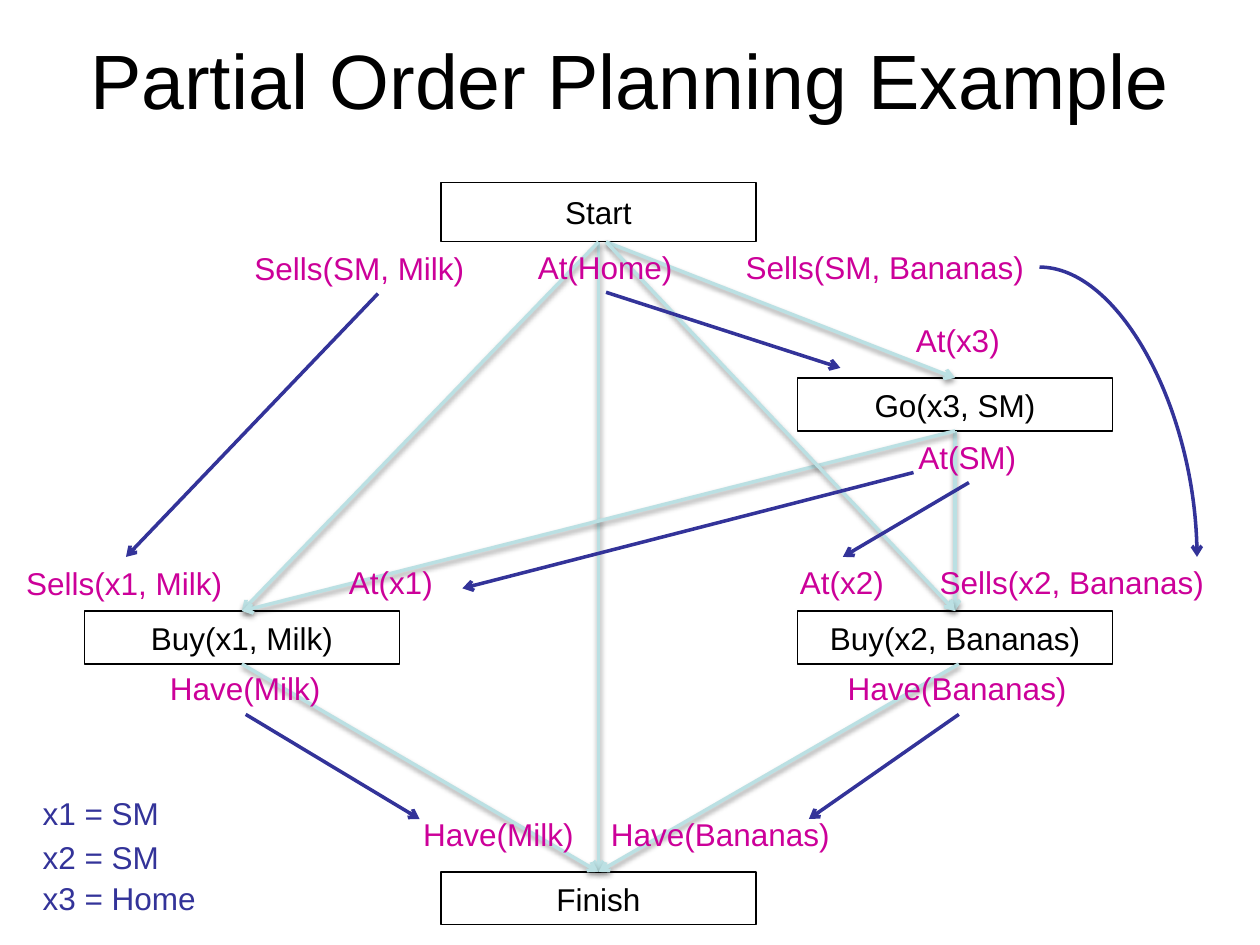
from dataclasses import dataclass

from lxml.etree import SubElement
from pptx import Presentation
from pptx.dml.color import RGBColor
from pptx.enum.shapes import MSO_CONNECTOR, MSO_SHAPE
from pptx.enum.text import MSO_ANCHOR, MSO_AUTO_SIZE, PP_ALIGN
from pptx.oxml.ns import qn
from pptx.slide import Slide
from pptx.util import Inches, Pt

TOP, BOTTOM = 0, 2


def color(hex_code):
    return RGBColor.from_string(hex_code)


@dataclass
class Diagram:
    slide: Slide
    font: str = "Arial"
    ink: str = "000000"
    paper: str = "FFFFFF"
    condition: str = "CC0099"
    causal: str = "333399"
    ordering: str = "BBE0E3"

    def set_text(self, frame, text, hex_code, size=18, align=None):
        frame.text = text
        paragraph = frame.paragraphs[0]
        paragraph.alignment = align
        paragraph.font.name = self.font
        paragraph.font.size = Pt(size)
        paragraph.font.color.rgb = color(hex_code)

    def title(self, text):
        frame = self.slide.shapes.add_textbox(
            Inches(0.5), Inches(0), Inches(9), Inches(1.25)).text_frame
        frame.word_wrap = True
        frame.vertical_anchor = MSO_ANCHOR.MIDDLE
        self.set_text(frame, text, self.ink, 44, PP_ALIGN.CENTER)

    def step(self, text, left, top, height=0.42):
        box = self.slide.shapes.add_shape(
            MSO_SHAPE.RECTANGLE, Inches(left), Inches(top), Inches(2.5), Inches(height))
        box.shadow.inherit = False
        box.fill.solid()
        box.fill.fore_color.rgb = color(self.paper)
        box.line.color.rgb = color(self.ink)
        box.line.width = Pt(0.75)
        box.text_frame.vertical_anchor = MSO_ANCHOR.MIDDLE
        self.set_text(box.text_frame, text, self.ink, align=PP_ALIGN.CENTER)
        return box

    def label(self, text, left, top, width, hex_code):
        frame = self.slide.shapes.add_textbox(
            Inches(left), Inches(top), Inches(width), Inches(0.4)).text_frame
        frame.word_wrap = False
        frame.auto_size = MSO_AUTO_SIZE.SHAPE_TO_FIT_TEXT
        self.set_text(frame, text, hex_code)

    def arrow(self, start, end, hex_code, kind=MSO_CONNECTOR.STRAIGHT):
        connector = self.slide.shapes.add_connector(
            kind, *(Inches(value) for value in start + end))
        connector.line.color.rgb = color(hex_code)
        connector.line.width = Pt(2)
        properties = connector._element.spPr
        SubElement(properties.find(qn("a:ln")), qn("a:tailEnd"), type="arrow")
        effects = SubElement(properties, qn("a:effectLst"))
        return connector, effects

    def cause(self, start, end):
        self.arrow(start, end, self.causal)

    def curved_cause(self, start, end):
        connector, _ = self.arrow(start, end, self.causal, MSO_CONNECTOR.CURVE)
        connector._element.spPr.find(qn("a:prstGeom")).set("prst", "curvedConnector2")

    def order(self, start, end, before=None, after=None):
        connector, effects = self.arrow(start, end, self.ordering)
        if before is not None:
            connector.begin_connect(before, BOTTOM)
        if after is not None:
            connector.end_connect(after, TOP)
        shadow = SubElement(effects, qn("a:outerShdw"), blurRad=str(Pt(3.1)),
                            dist=str(Pt(1.6)), dir="5400000", rotWithShape="0")
        shade = SubElement(shadow, qn("a:srgbClr"), val=self.ink)
        SubElement(shade, qn("a:alpha"), val="38000")


def main():
    presentation = Presentation()
    presentation.slide_width = Inches(10)
    presentation.slide_height = Inches(7.5)
    diagram = Diagram(presentation.slides.add_slide(presentation.slide_layouts[6]))

    diagram.title("Partial Order Planning Example")
    start = diagram.step("Start", 3.5, 1.45, 0.47)
    finish = diagram.step("Finish", 3.5, 6.92)
    buy_milk = diagram.step("Buy(x1, Milk)", 0.67, 4.85)
    buy_bananas = diagram.step("Buy(x2, Bananas)", 6.33, 4.85)
    go = diagram.step("Go(x3, SM)", 6.33, 3)

    start_exit, start_side_exit = (4.75, 1.92), (4.81, 1.92)
    milk_entry, bananas_entry = (1.92, 4.85), (7.58, 4.85)
    go_entry, go_exit = (7.58, 3), (7.58, 3.42)
    finish_entry = (4.75, 6.92)
    orderings = [
        (start_exit, finish_entry, start, finish),
        (start_exit, milk_entry, start, buy_milk),
        (start_side_exit, go_entry, None, go),
        ((1.92, 5.27), finish_entry, buy_milk, finish),
        (go_exit, bananas_entry, go, buy_bananas),
        ((7.61, 5.27), finish_entry, None, finish),
        (go_exit, milk_entry, go, buy_milk),
        (start_side_exit, bananas_entry, None, buy_bananas),
    ]
    for ordering in orderings:
        diagram.order(*ordering)

    conditions = [
        ("Sells(SM, Milk)", 1.92, 1.93, 1.88),
        ("At(Home)", 4.17, 1.92, 1.3),
        ("Sells(SM, Bananas)", 5.82, 1.92, 2.43),
        ("At(x3)", 7.17, 2.5, 0.89),
        ("At(SM)", 7.19, 3.43, 1),
        ("Sells(x1, Milk)", 0.11, 4.43, 1.77),
        ("At(x1)", 2.67, 4.42, 0.89),
        ("At(x2)", 6.25, 4.42, 0.89),
        ("Sells(x2, Bananas)", 7.36, 4.42, 2.32),
        ("Have(Milk)", 1.25, 5.26, 1.41),
        ("Have(Bananas)", 6.63, 5.26, 1.96),
        ("Have(Milk)", 3.26, 6.42, 1.41),
        ("Have(Bananas)", 4.75, 6.42, 1.96),
    ]
    for condition in conditions:
        diagram.label(*condition, diagram.condition)

    bindings = [("x1 = SM", 6.25, 1.13), ("x2 = SM", 6.6, 1.13), ("x3 = Home", 6.93, 1.43)]
    for text, top, width in bindings:
        diagram.label(text, 0.24, top, width, diagram.causal)

    causes = [
        ((1.95, 5.67), (3.33, 6.5)),
        ((7.61, 5.67), (6.42, 6.5)),
        ((3, 2.33), (1, 4.42)),
        ((7.69, 3.83), (6.69, 4.42)),
        ((7.25, 3.75), (3.67, 4.67)),
        ((4.81, 2.32), (6.67, 2.92)),
    ]
    for origin, target in causes:
        diagram.cause(origin, target)
    diagram.curved_cause((8.25, 2.12), (9.5, 4.42))

    presentation.save("out.pptx")


if __name__ == "__main__":
    main()
